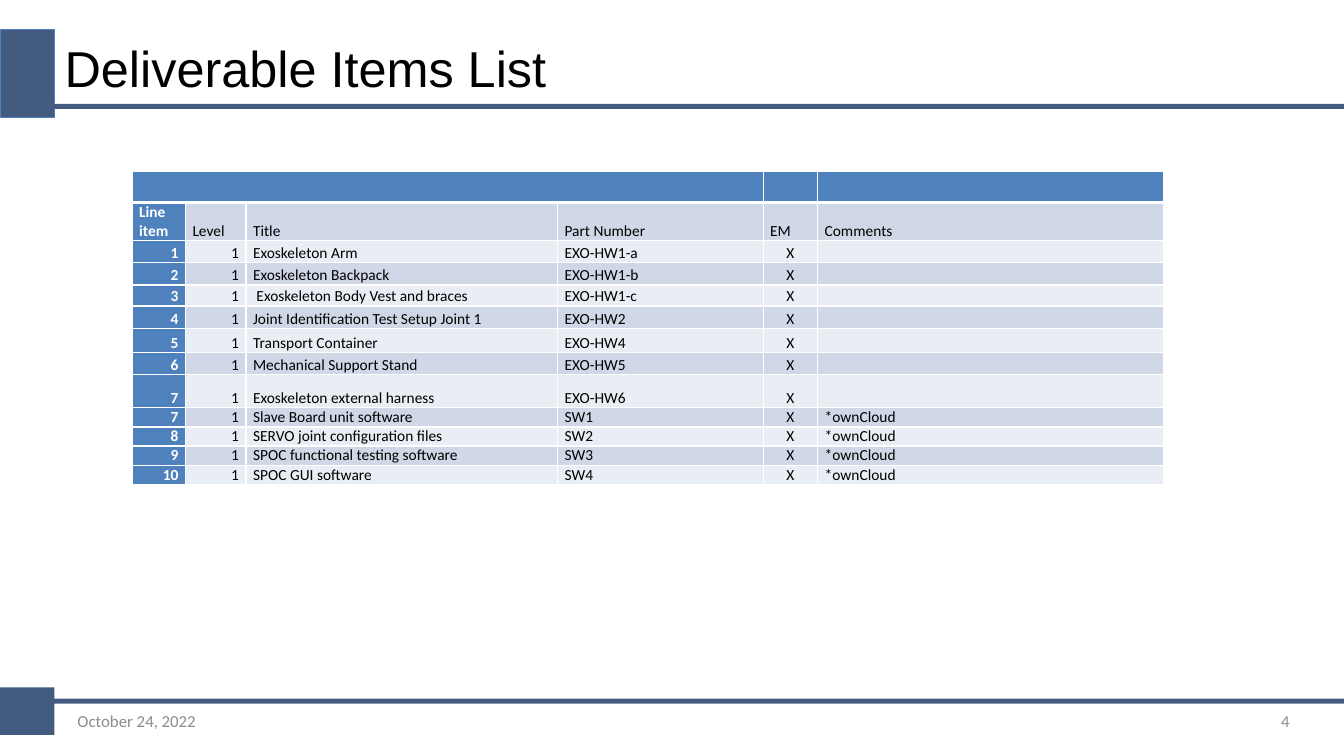
from lxml import etree
from pptx import Presentation
from pptx.dml.color import RGBColor
from pptx.enum.shapes import MSO_SHAPE
from pptx.enum.text import MSO_ANCHOR, MSO_AUTO_SIZE, PP_ALIGN
from pptx.oxml.ns import qn
from pptx.util import Inches, Pt

RECT = MSO_SHAPE.RECTANGLE
MIDDLE, BOTTOM, TOP = MSO_ANCHOR.MIDDLE, MSO_ANCHOR.BOTTOM, MSO_ANCHOR.TOP
LEFT, CENTER, RIGHT = PP_ALIGN.LEFT, PP_ALIGN.CENTER, PP_ALIGN.RIGHT
JUSTIFY = PP_ALIGN.JUSTIFY
NO_FIT = MSO_AUTO_SIZE.NONE

COLORS = {
    "navy": "425B7E", "blue": "4F81BD", "dark_band": "D0D8E8",
    "light_band": "E9EDF4", "white": "FFFFFF", "black": "000000",
    "gray": "8C8C8C",
}

COL_WIDTHS = [0.53, 0.6, 3.09, 2.04, 0.54, 3.43]
ROW_HEIGHTS = [0.31, 0.37, 0.22, 0.22, 0.21, 0.22, 0.24, 0.22, 0.33] + [0.19] * 4
COL_ALIGNS = [RIGHT, RIGHT, JUSTIFY, JUSTIFY, CENTER, JUSTIFY]
HEADINGS = ["Line item", "Level", "Title", "Part Number", "EM", "Comments"]
# Line item, title, part number, comments
ITEMS = [
    ("1", "Exoskeleton Arm", "EXO-HW1-a", ""),
    ("2", "Exoskeleton Backpack", "EXO-HW1-b", ""),
    ("3", " Exoskeleton Body Vest and braces", "EXO-HW1-c", ""),
    ("4", "Joint Identification Test Setup Joint 1", "EXO-HW2", ""),
    ("5", "Transport Container", "EXO-HW4", ""),
    ("6", "Mechanical Support Stand", "EXO-HW5", ""),
    ("7", "Exoskeleton external harness", "EXO-HW6", ""),
    ("7", "Slave Board unit software", "SW1", "*ownCloud"),
    ("8", "SERVO joint configuration files", "SW2", "*ownCloud"),
    ("9", "SPOC functional testing software", "SW3", "*ownCloud"),
    ("10", "SPOC GUI software", "SW4", "*ownCloud"),
]


class SlideBuilder:
    def __init__(self, prs):
        self.s = prs.slides.add_slide(prs.slide_layouts[5])

    def color(self, name):
        return RGBColor.from_string(COLORS[name])

    def set_text(self, tf, text, size, color, font="Calibri", align=LEFT, bold=False):
        p = tf.paragraphs[0]
        p.alignment = align
        p.font.name, p.font.size, p.font.bold = font, Pt(size), bold
        p.font.color.rgb = self.color(color)
        if text:
            p.add_run().text = text
        else:
            # Keeps an empty line from stretching its row
            end = etree.SubElement(p._p, qn("a:endParaRPr"))
            end.set("sz", str(size * 100))

    def bar(self, x, y, w, h, line=None):
        sp = self.s.shapes.add_shape(RECT, Inches(x), Inches(y), Inches(w), Inches(h))
        sp.shadow.inherit = False
        sp.fill.solid()
        sp.fill.fore_color.rgb = self.color("navy")
        if line:
            sp.line.color.rgb = self.color(line)
            sp.line.width = Pt(0.5)
        else:
            sp.line.fill.background()

    def title(self, text, x, y, w, h):
        sp = self.s.shapes.title
        sp.left, sp.top, sp.width, sp.height = map(Inches, (x, y, w, h))
        tf = sp.text_frame
        tf.auto_size, tf.vertical_anchor, tf.word_wrap = NO_FIT, MIDDLE, True
        self.set_text(tf, text, 36, "black", "Arial")

    def label(self, text, x, y, w, h, align=LEFT):
        sp = self.s.shapes.add_textbox(Inches(x), Inches(y), Inches(w), Inches(h))
        tf = sp.text_frame
        tf.word_wrap, tf.vertical_anchor = True, MIDDLE
        self.set_text(tf, text, 12, "gray", align=align)

    def borders(self, cell, top, bottom):
        tc_pr = cell._tc.get_or_add_tcPr()
        for side, width in (("L", 1), ("R", 1), ("T", top), ("B", bottom)):
            ln = etree.SubElement(tc_pr, qn(f"a:ln{side}"), w=str(Pt(width)))
            fill = etree.SubElement(ln, qn("a:solidFill"))
            etree.SubElement(fill, qn("a:srgbClr"), val=COLORS["white"])

    def cell(self, cell, text, fill, align, header=False, anchor=BOTTOM,
             top=1, bottom=1):
        cell.margin_left = cell.margin_right = Inches(0.07)
        cell.margin_top = cell.margin_bottom = 0
        cell.vertical_anchor = anchor
        self.borders(cell, top, bottom)
        cell.fill.solid()
        cell.fill.fore_color.rgb = self.color(fill)
        self.set_text(cell.text_frame, text, 11, "white" if header else "black",
                      align=align, bold=header)

    def table(self, rows, x, y):
        frame = self.s.shapes.add_table(
            len(rows), len(COL_WIDTHS), Inches(x), Inches(y),
            Inches(sum(COL_WIDTHS)), Inches(sum(ROW_HEIGHTS)))
        tbl = frame.table
        tbl.first_row = tbl.horz_banding = False
        for col, width in zip(tbl.columns, COL_WIDTHS):
            col.width = Inches(width)
        for row, height in zip(tbl.rows, ROW_HEIGHTS):
            row.height = Inches(height)
        for i, row in enumerate(rows):
            band = "dark_band" if i % 2 else "light_band"
            for j, text in enumerate(row):
                header = i == 0 or j == 0
                self.cell(
                    tbl.cell(i, j), text, "blue" if header else band,
                    JUSTIFY if i < 2 else COL_ALIGNS[j], header,
                    TOP if i == 1 and j == 0 else BOTTOM,
                    top=3 if i == 1 else 1, bottom=3 if i == 0 else 1)
        tbl.cell(0, 0).merge(tbl.cell(0, 3))


def main():
    prs = Presentation()
    prs.slide_width, prs.slide_height = Inches(13.33), Inches(7.5)
    slide = SlideBuilder(prs)

    # Header and footer bars
    slide.bar(0, 0.29, 0.54, 0.87, line="blue")
    slide.bar(0.37, 1.03, 12.97, 0.05)
    slide.bar(0, 6.82, 0.54, 0.47)
    slide.bar(0.37, 6.93, 12.97, 0.05)

    # Title
    slide.title("Deliverable Items List", 0.54, 0.3, 10.3, 0.73)

    # Deliverables table
    items = [[number, "1", name, part, "X", note] for number, name, part, note in ITEMS]
    slide.table([[""] * len(HEADINGS), HEADINGS] + items, 1.31, 1.7)

    # Footer
    slide.label("October 24, 2022", 0.67, 6.95, 3.11, 0.4)
    slide.label("4", 9.78, 6.95, 3.11, 0.4, RIGHT)

    prs.save("out.pptx")


if __name__ == "__main__":
    main()
